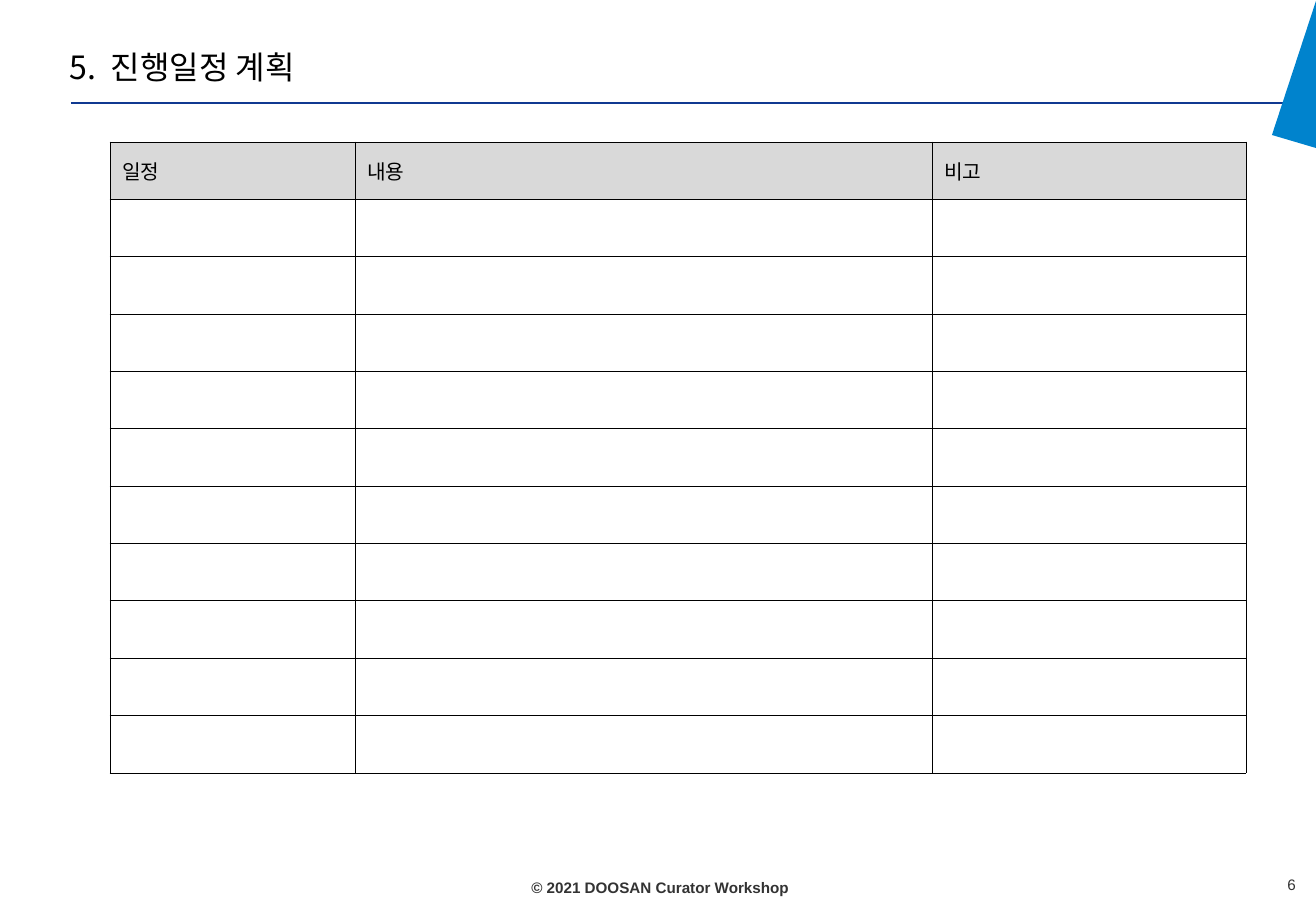
from lxml.etree import SubElement
from pptx import Presentation
from pptx.dml.color import RGBColor
from pptx.enum.shapes import MSO_CONNECTOR
from pptx.enum.text import MSO_ANCHOR, PP_ALIGN
from pptx.oxml.ns import qn
from pptx.util import Pt

SCALE = 7526
KOREAN = "Noto Sans CJK KR"
HEADERS = ["일정", "내용", "비고"]
COLUMN_WIDTHS = [245, 577, 314]
ROW_COUNT = 11
WEDGES = [
    [(1316, 1), (1272, 135), (1316, 148)],
    [(1316, 9), (1276, 134), (1316, 146)],
]


def px(n):
    """Turn pixels into EMU."""
    return n * SCALE


def color(value):
    """Turn a hex string into a colour."""
    return RGBColor.from_string(value)


def write(tf, text, size=9, font="Arial", fill="333333", bold=False,
          align=PP_ALIGN.LEFT, tab=None):
    """Write one formatted paragraph into a text frame."""
    p = tf.paragraphs[0]
    p.alignment = align
    if tab:
        tabs = SubElement(p._p.get_or_add_pPr(), qn("a:tabLst"))
        SubElement(tabs, qn("a:tab"), pos=str(px(tab)), algn="l")
    r = p.add_run()
    r.text = text
    r.font.size = Pt(size)
    r.font.bold = bold
    r.font.name = font
    r.font.color.rgb = color(fill)
    SubElement(r._r.get_or_add_rPr(), qn("a:ea"), typeface=font)


def add_text(s, x, y, w, h, text, anchor=MSO_ANCHOR.TOP, **style):
    """Add a text box without margins."""
    tf = s.shapes.add_textbox(px(x), px(y), px(w), px(h)).text_frame
    tf.word_wrap = True
    tf.margin_left = tf.margin_right = tf.margin_top = tf.margin_bottom = 0
    tf.vertical_anchor = anchor
    write(tf, text, **style)


def add_rule(s, x1, x2, y, fill, width):
    """Add a horizontal line."""
    line = s.shapes.add_connector(
        MSO_CONNECTOR.STRAIGHT, px(x1), px(y), px(x2), px(y))
    line.line.color.rgb = color(fill)
    line.line.width = Pt(width)
    SubElement(line._element.spPr, qn("a:effectLst"))


def add_wedge(s, points, fill):
    """Add a filled polygon."""
    builder = s.shapes.build_freeform(*points[0], scale=SCALE)
    builder.add_line_segments(points[1:], close=True)
    sp = builder.convert_to_shape()
    sp.shadow.inherit = False
    sp.fill.solid()
    sp.fill.fore_color.rgb = color(fill)
    sp.line.fill.background()


def style_cell(cell, fill):
    """Give a cell thin black borders and a fill."""
    tcPr = cell._tc.get_or_add_tcPr()
    for side in ("lnL", "lnR", "lnT", "lnB"):
        ln = SubElement(tcPr, qn(f"a:{side}"), w=str(Pt(0.5)))
        solid = SubElement(ln, qn("a:solidFill"))
        SubElement(solid, qn("a:srgbClr"), val="000000")
    cell.fill.solid()
    cell.fill.fore_color.rgb = color(fill)
    cell.vertical_anchor = MSO_ANCHOR.MIDDLE


def add_schedule(s, x, y, h):
    """Add the schedule table with its header row."""
    table = s.shapes.add_table(ROW_COUNT, len(HEADERS), px(x), px(y),
                               px(sum(COLUMN_WIDTHS)), px(h)).table
    table.first_row = table.horz_banding = False
    for column, width in zip(table.columns, COLUMN_WIDTHS):
        column.width = px(width)
    for i, row in enumerate(table.rows):
        row.height = px(h) // ROW_COUNT
        for cell in row.cells:
            style_cell(cell, "FFFFFF" if i else "D9D9D9")
    for cell, text in zip(table.rows[0].cells, HEADERS):
        write(cell.text_frame, text, size=12, font=KOREAN, fill="000000")


def main():
    """Build the slide and save it."""
    prs = Presentation()
    prs.slide_width, prs.slide_height = px(1316), px(911)
    s = prs.slides.add_slide(prs.slide_layouts[6])
    add_rule(s, 71, 1290, 103, "103991", 1.5)
    for points in WEDGES:
        add_wedge(s, points, "0083CD")
    add_text(s, 479, 861, 362, 36, "© 2021 DOOSAN Curator Workshop",
             anchor=MSO_ANCHOR.BOTTOM, bold=True, align=PP_ALIGN.CENTER)
    add_text(s, 70, 47, 1169, 39, "5.\t진행일정 계획", anchor=MSO_ANCHOR.MIDDLE,
             size=19, font=KOREAN, fill="000000", tab=41)
    add_text(s, 1057, 875, 239, 27, "6", align=PP_ALIGN.RIGHT)
    add_schedule(s, 110, 142, 631)
    prs.save("out.pptx")


if __name__ == "__main__":
    main()
